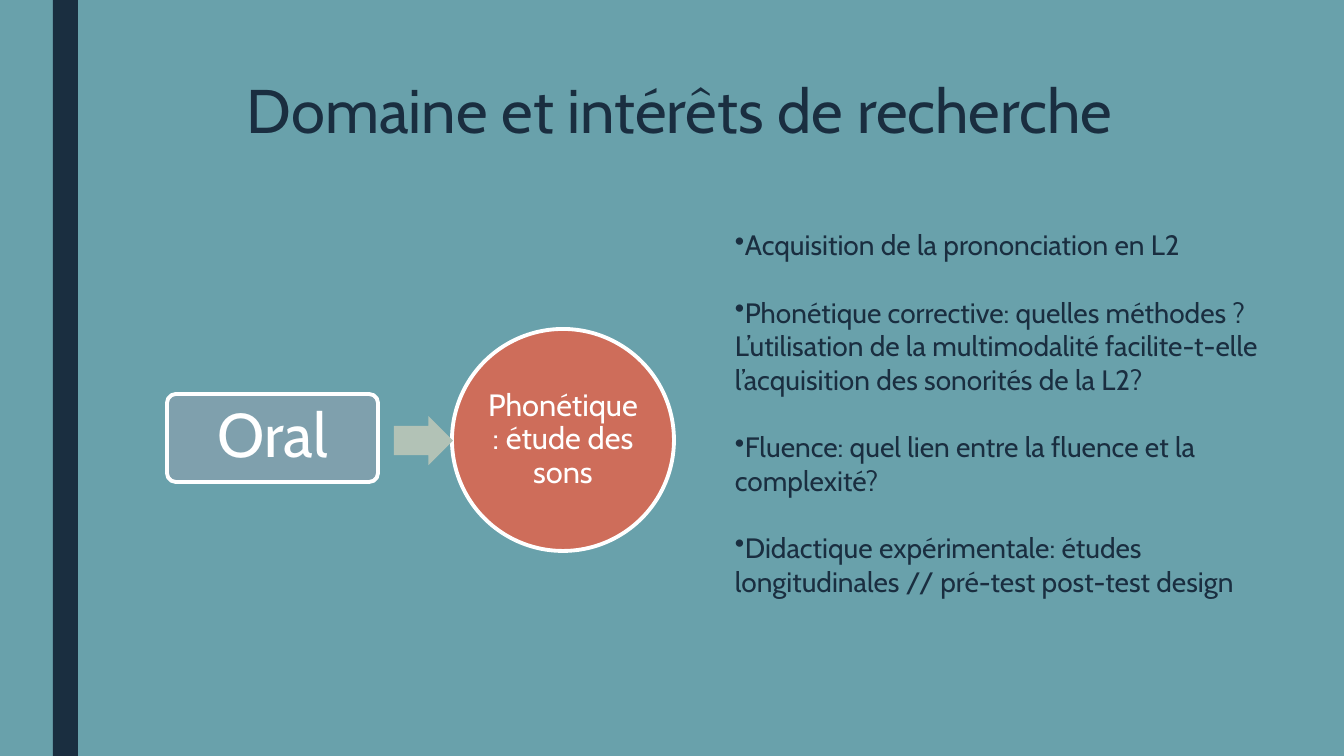
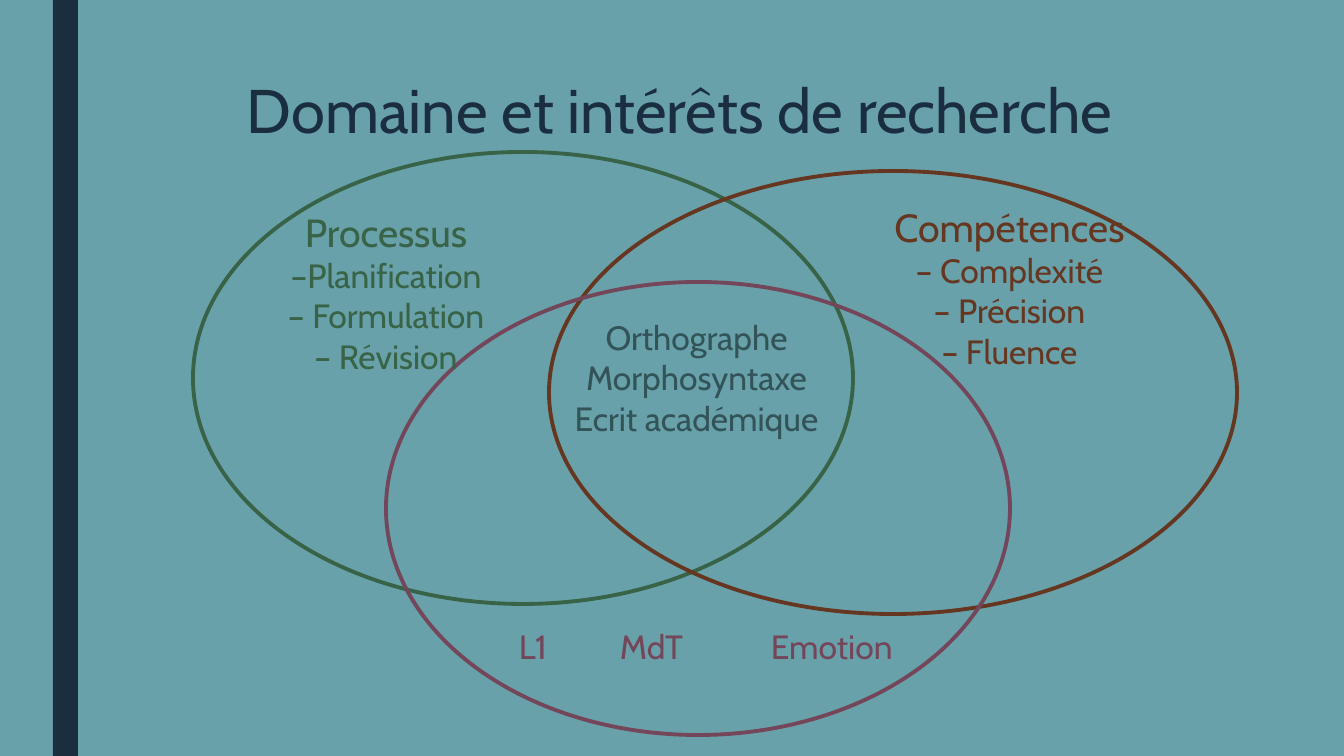
import pptx
import pptx.dml.color
import pptx.enum.shapes
import pptx.enum.text
import pptx.oxml
import pptx.oxml.ns
import pptx.util
from dataclasses import dataclass

SHAPE = pptx.enum.shapes.MSO_SHAPE
ALIGN = pptx.enum.text.PP_ALIGN
ANCHOR = pptx.enum.text.MSO_ANCHOR


@dataclass(frozen=True)
class Theme:
    font: str = "Cabin"
    background: str = "69A1AB"
    navy: str = "1A2E40"
    white: str = "FFFFFF"
    coral: str = "CE6D5A"
    sage: str = "B2C2B6"
    slate: str = "7FA0AD"
    green: str = "386346"
    brown: str = "653721"
    plum: str = "73465A"
    teal: str = "325358"
    title_size: int = 44
    heading_size: int = 28
    item_size: int = 24
    circle_size: int = 22
    body_size: int = 20
    outline: float = 2.75


def px(length):
    return pptx.util.Emu(round(length * 12192000 / 1344))


def rgb(color):
    return pptx.dml.color.RGBColor.from_string(color)


class Deck:
    def __init__(self, theme):
        self.theme = theme
        self.presentation = pptx.Presentation()
        self.presentation.slide_width = px(1344)
        self.presentation.slide_height = px(756)
        fill = self.presentation.slide_master.background.fill
        fill.solid()
        fill.fore_color.rgb = rgb(theme.background)
        self.slide = None

    def new_slide(self, title):
        self.slide = self.presentation.slides.add_slide(self.presentation.slide_layouts[5])
        self.shape(SHAPE.RECTANGLE, (53, 0, 25, 756), fill=self.theme.navy)
        placeholder = self.slide.shapes.title
        placeholder.left, placeholder.top, placeholder.width, placeholder.height = map(px, (151, 76, 1058, 163))
        frame = placeholder.text_frame
        frame.vertical_anchor = ANCHOR.TOP
        self.add_text(frame.paragraphs[0], title, self.theme.title_size, self.theme.navy, ALIGN.CENTER, 0.89)

    def add_text(self, paragraph, text, size, color, align=ALIGN.LEFT, spacing=None):
        paragraph.alignment = align
        paragraph.line_spacing = spacing
        run = paragraph.add_run()
        run.text = text
        run.font.name = self.theme.font
        run.font.size = pptx.util.Pt(size)
        run.font.color.rgb = rgb(color)

    def shape(self, kind, box, fill=None, line=None, adjustments=()):
        shape = self.slide.shapes.add_shape(kind, *map(px, box))
        shape.shadow.inherit = False
        for index, value in enumerate(adjustments):
            shape.adjustments[index] = value
        if fill:
            shape.fill.solid()
            shape.fill.fore_color.rgb = rgb(fill)
        else:
            shape.fill.background()
        if line:
            shape.line.color.rgb = rgb(line)
            shape.line.width = pptx.util.Pt(self.theme.outline)
        else:
            shape.line.fill.background()
        return shape

    def label(self, shape, text, size):
        frame = shape.text_frame
        frame.word_wrap = True
        frame.vertical_anchor = ANCHOR.MIDDLE
        frame.margin_left = frame.margin_right = frame.margin_top = frame.margin_bottom = px(2)
        self.add_text(frame.paragraphs[0], text, size, self.theme.white, ALIGN.CENTER, 0.9)

    def text(self, box, lines, color, align=ALIGN.CENTER, gap=0):
        frame = self.slide.shapes.add_textbox(*map(px, box)).text_frame
        frame.word_wrap = True
        for index, (line, size) in enumerate(lines):
            paragraph = frame.add_paragraph() if index else frame.paragraphs[0]
            self.add_text(paragraph, line, size, color, align)
            if index and gap:
                paragraph.space_before = pptx.util.Pt(gap)
        return frame.paragraphs

    def bullets(self, box, items):
        lines = [(item, self.theme.body_size) for item in items]
        for paragraph in self.text(box, lines, self.theme.navy, ALIGN.LEFT, gap=24):
            properties = paragraph._p.get_or_add_pPr()
            properties.set("marL", "0")
            properties.set("indent", "0")
            bullet = pptx.oxml.parse_xml(f'<a:buChar {pptx.oxml.ns.nsdecls("a")} char="•"/>')
            properties.append(bullet)

    def tabbed(self, box, words, color, stops):
        paragraph = self.text(box, [("\t".join(words), self.theme.item_size)], color, ALIGN.LEFT)[0]
        tabs = "".join(f'<a:tab pos="{px(stop)}" algn="l"/>' for stop in stops)
        tab_list = pptx.oxml.parse_xml(f'<a:tabLst {pptx.oxml.ns.nsdecls("a")}>{tabs}</a:tabLst>')
        paragraph._p.get_or_add_pPr().append(tab_list)


def build_oral(deck, title):
    theme = deck.theme
    deck.new_slide(title)
    sounds = deck.shape(SHAPE.OVAL, (452, 329, 222, 222), theme.coral, theme.white)
    deck.label(sounds, "Phonétique : étude des sons", theme.circle_size)
    deck.shape(SHAPE.RIGHT_ARROW, (394, 416, 59, 49), theme.sage, adjustments=(0.6, 0.5))
    oral = deck.shape(SHAPE.ROUNDED_RECTANGLE, (167, 394, 211, 88), theme.slate, theme.white, (0.1,))
    deck.label(oral, "Oral", theme.title_size)
    deck.bullets((725, 223, 581, 383), [
        "Acquisition de la prononciation en L2",
        "Phonétique corrective: quelles méthodes ? L’utilisation de la multimodalité "
        "facilite-t-elle l’acquisition des sonorités de la L2?",
        "Fluence: quel lien entre la fluence et la complexité?",
        "Didactique expérimentale: études longitudinales // pré-test post-test design",
    ])


def build_writing(deck, title):
    theme = deck.theme
    deck.new_slide(title)
    for box, color in (
        ((193, 152, 660, 452), theme.green),
        ((549, 171, 688, 443), theme.brown),
        ((386, 282, 624, 453), theme.plum),
    ):
        deck.shape(SHAPE.OVAL, box, line=color)
    for box, color, heading, items in (
        ((267, 203, 238, 179), theme.green, "Processus",
         ("–Planification", "– Formulation", "– Révision")),
        ((872, 198, 275, 179), theme.brown, "Compétences",
         ("– Complexité", "– Précision", "– Fluence")),
    ):
        lines = [(heading, theme.heading_size)] + [(item, theme.item_size) for item in items]
        deck.text(box, lines, color)
    shared = ("Orthographe", "Morphosyntaxe", "Ecrit académique")
    deck.text((545, 312, 303, 132), [(item, theme.item_size) for item in shared], theme.teal)
    deck.tabbed((509, 621, 425, 50), ("L1", "MdT", "Emotion"), theme.plum, (101, 252))


def main():
    deck = Deck(Theme())
    title = "Domaine et intérêts de recherche"
    build_oral(deck, title)
    build_writing(deck, title)
    deck.presentation.save("out.pptx")


if __name__ == "__main__":
    main()
